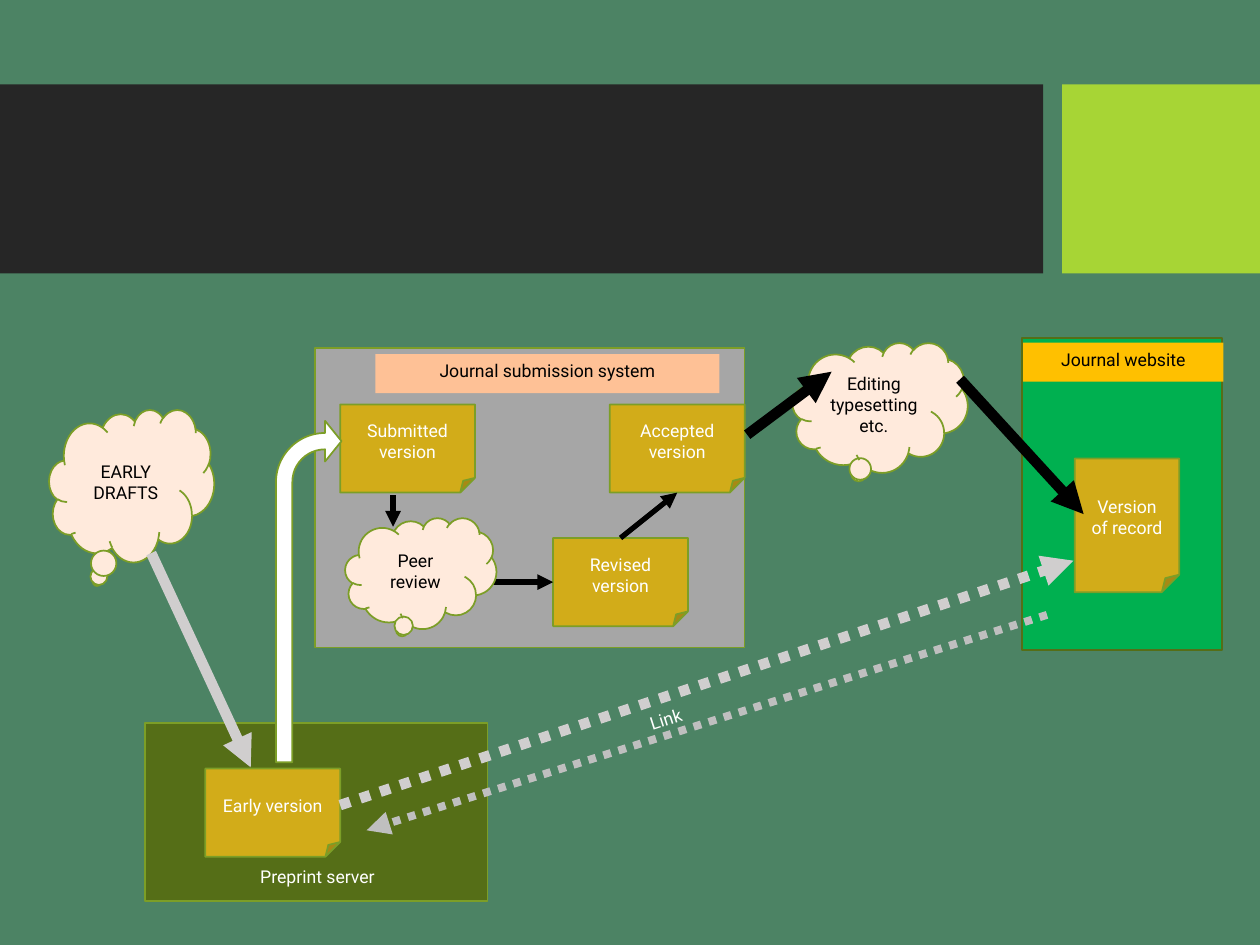
from pptx import Presentation
from pptx.dml.color import RGBColor
from pptx.enum.dml import MSO_LINE
from pptx.enum.shapes import MSO_CONNECTOR, MSO_SHAPE
from pptx.enum.text import MSO_ANCHOR, PP_ALIGN
from pptx.oxml.ns import qn
from pptx.util import Pt
from lxml import etree

PX = 9144  # 100 px to the inch
FONT, TEXT_SIZE = "Roboto", 10.1
RECT, NOTE, CLOUD = MSO_SHAPE.RECTANGLE, MSO_SHAPE.FOLDED_CORNER, MSO_SHAPE.CLOUD_CALLOUT
BENT_ARROW = MSO_SHAPE.BENT_ARROW
STRAIGHT = MSO_CONNECTOR.STRAIGHT
DOTTED = MSO_LINE.ROUND_DOT
TOP, MIDDLE = MSO_ANCHOR.TOP, MSO_ANCHOR.MIDDLE
CENTER = PP_ALIGN.CENTER
TOP_SIDE, LEFT_SIDE, BOTTOM_SIDE = 0, 1, 2
NOTE_W, NOTE_H, LABEL_H = 107, 70, 31

COLORS = {
    "background": "4C8364", "band": "262626", "accent": "A7D535",
    "outline": "7C9E27", "olive": "556E17", "cloud": "FFEADC", "note": "D2AC19",
    "website": "00B050", "website label": "FFC000",
    "system": "A6A6A6", "system label": "FEC196",
    "black": "000000", "white": "FFFFFF", "pale": "D0CECE", "grey": "BFBFBF",
}


def rgb(name):
    return RGBColor.from_string(COLORS[name])


def emu(*lengths):
    return [round(length * PX) for length in lengths]


def write(shape, text, color, anchor):
    frame = shape.text_frame
    frame.text = text
    frame.word_wrap = True
    frame.vertical_anchor = anchor
    paragraph = frame.paragraphs[0]
    paragraph.alignment = CENTER
    font = paragraph.runs[0].font
    font.name, font.size, font.color.rgb = FONT, Pt(TEXT_SIZE), rgb(color)


def block(slide, kind, box, fill, outline=None, text=None, color="black", anchor=MIDDLE):
    shape = slide.shapes.add_shape(kind, *emu(*box))
    shape.shadow.inherit = False
    shape.fill.solid()
    shape.fill.fore_color.rgb = rgb(fill)
    if outline:
        shape.line.color.rgb = rgb(outline)
        shape.line.width = Pt(1)
    else:
        shape.line.fill.background()
    if text:
        write(shape, text, color, anchor)
    return shape


def note(slide, x, y, text, w=NOTE_W, h=NOTE_H):
    return block(slide, NOTE, (x, y, w, h), "note", "outline", text, "white")


def cloud(slide, box, text, tail=(-0.12, 0.5)):
    shape = block(slide, CLOUD, box, "cloud", "outline", text)
    shape.adjustments[0], shape.adjustments[1] = tail
    return shape


def label(slide, box, fill, text):
    return block(slide, RECT, box, fill, text=text, anchor=TOP)


def caption(slide, box, text):
    shape = slide.shapes.add_textbox(*emu(*box))
    write(shape, text, "white", TOP)
    return shape


def arrow(slide, start, end, color="black", width=3, dash=None):
    line = slide.shapes.add_connector(STRAIGHT, *emu(*start, *end))
    line.line.color.rgb = rgb(color)
    line.line.width = Pt(width)
    if dash:
        line.line.dash_style = dash
    properties = line._element.spPr
    etree.SubElement(properties.find(qn("a:ln")), qn("a:tailEnd"), type="triangle")
    etree.SubElement(properties, qn("a:effectLst"))
    return line


def header_band(slide, x, y, w, h):
    accent_w, gap = 157, 15
    block(slide, RECT, (x, y, w - accent_w - gap, h), "band")
    block(slide, RECT, (x + w - accent_w, y, accent_w, h), "accent")


def preprint_server(slide, x, y, w, h):
    block(slide, RECT, (x, y, w, h), "olive", "outline")
    caption(slide, (x + 3, y + 108, w - 4, LABEL_H), "Preprint server")
    note(slide, x + 48, y + 36, "Early version")


def journal_website(slide, x, y, w, h):
    block(slide, RECT, (x, y, w, h), "website", "olive")
    label(slide, (x + 1, y + 4, w, LABEL_H), "website label", "Journal website")
    note(slide, x + 42, y + 96, "Version of record", 83, 106)


def submission_system(slide, x, y, w, h):
    block(slide, RECT, (x, y, w, h), "system", "outline")
    label(slide, (x + 48, y + 5, 273, LABEL_H), "system label", "Journal submission system")
    note(slide, x + 20, y + 45, "Submitted version")
    revised = note(slide, x + 189, y + 151, "Revised version")
    accepted = note(slide, x + w - NOTE_W, y + 45, "Accepted version")
    review_to_revised = arrow(slide, (x + 126, y + 186), (x + 189, y + 186))
    review_to_revised.end_connect(revised, LEFT_SIDE)
    cloud(slide, (x + 24, y + 135, 120, 88), "Peer review")
    revised_to_accepted = arrow(slide, (x + 242, y + 151), (x + 287, y + 115))
    revised_to_accepted.begin_connect(revised, TOP_SIDE)
    revised_to_accepted.end_connect(accepted, BOTTOM_SIDE)
    arrow(slide, (x + 62, y + 117), (x + 62, y + 142))


def flows(slide):
    """Arrows that run from one region to another."""
    arrow(slide, (120, 439), (199, 609), "pale", 6)
    arrow(slide, (270, 639), (852, 445), "pale", 6, DOTTED)
    submission = block(slide, BENT_ARROW, (219, 334, 52, 271), "white", "outline")
    for index, value in enumerate((0.25, 0.31, 0.25, 0.75)):
        submission.adjustments[index] = value
    arrow(slide, (593, 345), (660, 295), width=6)
    arrow(slide, (762, 301), (860, 408), width=6)
    caption(slide, (395, 557, 268, LABEL_H), "Link").rotation = 342.2
    arrow(slide, (831, 488), (291, 659), "grey", 4.5, DOTTED)


def main():
    deck = Presentation()
    deck.slide_width, deck.slide_height = emu(1000, 750)
    slide = deck.slides.add_slide(deck.slide_layouts[6])
    slide.background.fill.solid()
    slide.background.fill.fore_color.rgb = rgb("background")

    header_band(slide, 0, 67, 1000, 150)
    cloud(slide, (39, 325, 131, 121), "EARLY DRAFTS", (-0.21, 0.63))
    editing = cloud(slide, (629, 272, 139, 103), "Editing typesetting etc.")
    editing.text_frame.margin_left, editing.text_frame.margin_right = emu(3, 3)
    preprint_server(slide, 115, 574, 272, 141)
    journal_website(slide, 811, 268, 159, 248)
    submission_system(slide, 250, 276, 341, 238)
    flows(slide)
    deck.save("out.pptx")


if __name__ == "__main__":
    main()
